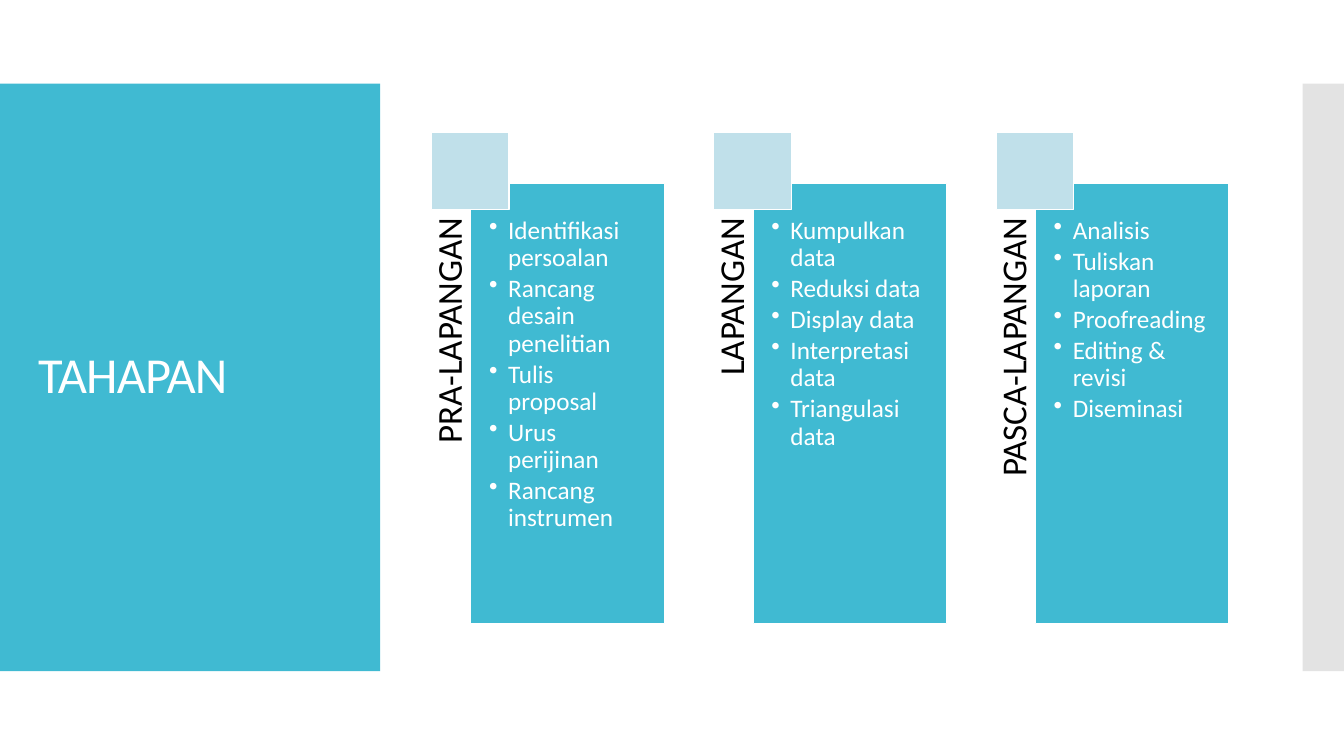
"""Build the TAHAPAN slide: a title band beside three research stages."""
from dataclasses import dataclass

import pptx
import pptx.dml.color
import pptx.enum.shapes
import pptx.enum.text
import pptx.oxml
import pptx.oxml.ns
import pptx.util
from lxml import etree

Inches = pptx.util.Inches
Pt = pptx.util.Pt
RGB = pptx.dml.color.RGBColor.from_string
Align = pptx.enum.text.PP_ALIGN
Anchor = pptx.enum.text.MSO_ANCHOR
qn = pptx.oxml.ns.qn


@dataclass(frozen=True)
class Theme:
    """Colours, font and type sizes."""
    font: str = "Calibri"
    accent: str = "40BAD2"
    pale: str = "C0E0EA"
    grey: str = "C8C8C8"
    light: str = "FFFFFF"
    dark: str = "000000"
    title_size: float = 36
    label_size: float = 25
    body_size: float = 18
    line_width: float = 0.85


class Deck:
    """Draws elements on the current slide in one style."""

    def __init__(self, prs, theme):
        self.theme = theme
        self.s = prs.slides.add_slide(prs.slide_layouts[6])

    def rect(self, box, fill, outlined=False, alpha=None):
        """Add a filled rectangle."""
        sp = self.s.shapes.add_shape(
            pptx.enum.shapes.MSO_SHAPE.RECTANGLE, *map(Inches, box))
        sp.shadow.inherit = False
        sp.fill.solid()
        sp.fill.fore_color.rgb = RGB(fill)
        if outlined:
            sp.line.color.rgb = RGB(self.theme.light)
            sp.line.width = Pt(self.theme.line_width)
        else:
            sp.line.fill.background()
        if alpha is not None:
            color = sp._element.spPr.find(".//" + qn("a:srgbClr"))
            etree.SubElement(color, qn("a:alpha"), val=str(alpha * 1000))
        return sp

    def set_text(self, sp, lines, size, color, insets, anchor=Anchor.TOP, **fmt):
        """Fill a shape with formatted paragraphs."""
        tf = sp.text_frame
        sides = ("left", "top", "right", "bottom")
        frame = {f"margin_{side}": Inches(v) for side, v in zip(sides, insets)}
        frame.update(word_wrap=True, vertical_anchor=anchor)
        for name, value in frame.items():
            setattr(tf, name, value)
        tf.text = "\n".join(lines)
        style = {"alignment": Align.LEFT, "line_spacing": 0.9, **fmt}
        font = {"name": self.theme.font, "size": Pt(size)}
        for p in tf.paragraphs:
            for name, value in style.items():
                setattr(p, name, value)
            r = p.runs[0]
            for name, value in font.items():
                setattr(r.font, name, value)
            r.font.color.rgb = RGB(color)
        return tf

    def title(self, box, text):
        """Add the slide title."""
        t = self.theme
        sp = self.s.shapes.add_textbox(*map(Inches, box))
        tf = self.set_text(sp, [text], t.title_size, t.light,
                           (0.1, 0.05, 0.1, 0.05), Anchor.MIDDLE)
        tf.paragraphs[0].runs[0]._r.get_or_add_rPr().set("spc", "-60")

    def label(self, box, text):
        """Add a stage name that reads upwards."""
        t = self.theme
        sp = self.s.shapes.add_textbox(*map(Inches, box))
        sp.rotation = 270
        self.set_text(sp, [text], t.label_size, t.dark, (0, 0, 0.34, 0),
                      alignment=Align.RIGHT)

    def panel(self, box, items):
        """Add a panel of bulleted steps."""
        t = self.theme
        sp = self.rect(box, t.accent, outlined=True)
        tf = self.set_text(sp, items, t.body_size, t.light,
                           (0.18, 0.34, 0.18, 0.18), level=1,
                           space_after=Pt(0.15 * t.body_size))
        for p in tf.paragraphs:
            pPr = p._p.get_or_add_pPr()
            pPr.set("marL", str(Inches(0.19)))
            pPr.set("indent", str(-Inches(0.19)))
            etree.SubElement(pPr, qn("a:buChar"), char="•")

    def stage(self, left, name, items):
        """Add one stage: label, panel and corner square."""
        self.label((left - 1.99, 3.81, 4.37, 0.39), name)
        self.panel((left + 0.39, 1.82, 1.92, 4.37), items)
        self.rect((left, 1.31, 0.77, 0.77), self.theme.pale, outlined=True)


STAGES = {
    "PRA-LAPANGAN": ["Identifikasi persoalan", "Rancang desain penelitian",
                     "Tulis proposal", "Urus perijinan", "Rancang instrumen"],
    "LAPANGAN": ["Kumpulkan data", "Reduksi data", "Display data",
                 "Interpretasi data", "Triangulasi data"],
    "PASCA-LAPANGAN": ["Analisis", "Tuliskan laporan", "Proofreading",
                       "Editing & revisi", "Diseminasi"],
}


def main():
    """Build and save the slide."""
    prs = pptx.Presentation()
    prs.slide_width, prs.slide_height = Inches(13.33), Inches(7.5)
    theme = Theme()
    deck = Deck(prs, theme)
    deck.rect((0, 0.83, 3.77, 5.83), theme.accent)
    deck.rect((12.92, 0.83, 0.41, 5.83), theme.grey, alpha=50)
    deck.title((0.28, 1.23, 3.22, 5.03), "TAHAPAN")
    for i, (name, items) in enumerate(STAGES.items()):
        deck.stage(4.28 + 2.8 * i, name, items)
    prs.save("out.pptx")


if __name__ == "__main__":
    main()
